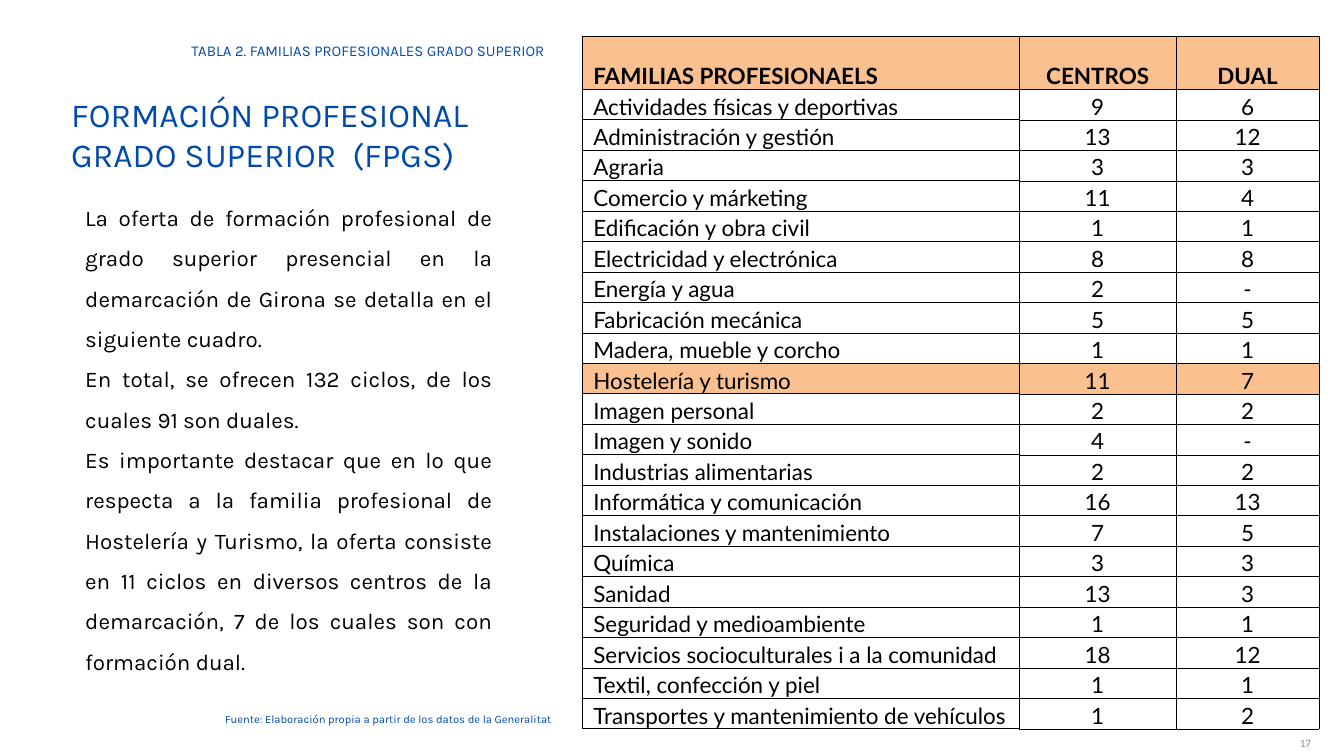
import pptx
import pptx.dml.color
import pptx.enum.text
import pptx.oxml
import pptx.oxml.ns
import pptx.util

EMU_PER_PX = 9144  # 100 px to the inch
COLORS = {"text": "000000", "blue": "004AAD", "highlight": "FAC090", "page": "8C8C8C"}
ALIGN = pptx.enum.text.PP_ALIGN
ANCHOR = pptx.enum.text.MSO_ANCHOR

HEADERS = ("FAMILIAS PROFESIONAELS", "CENTROS", "DUAL")
FAMILIES = [
    ("Actividades físicas y deportivas", 9, 6),
    ("Administración y gestión", 13, 12),
    ("Agraria", 3, 3),
    ("Comercio y márketing", 11, 4),
    ("Edificación y obra civil", 1, 1),
    ("Electricidad y electrónica", 8, 8),
    ("Energía y agua", 2, "-"),
    ("Fabricación mecánica", 5, 5),
    ("Madera, mueble y corcho", 1, 1),
    ("Hostelería y turismo", 11, 7),
    ("Imagen personal", 2, 2),
    ("Imagen y sonido", 4, "-"),
    ("Industrias alimentarias", 2, 2),
    ("Informática y comunicación", 16, 13),
    ("Instalaciones y mantenimiento", 7, 5),
    ("Química", 3, 3),
    ("Sanidad", 13, 3),
    ("Seguridad y medioambiente", 1, 1),
    ("Servicios socioculturales i a la comunidad", 18, 12),
    ("Textil, confección y piel", 1, 1),
    ("Transportes y mantenimiento de vehículos", 1, 2),
]
HIGHLIGHTED_FAMILY = "Hostelería y turismo"
BODY = [
    "La oferta de formación profesional de grado superior presencial en la "
    "demarcación de Girona se detalla en el siguiente cuadro.",
    "En total, se ofrecen 132 ciclos, de los cuales 91 son duales.",
    "Es importante destacar que en lo que respecta a la familia profesional de "
    "Hostelería y Turismo, la oferta consiste en 11 ciclos en diversos centros de la "
    "demarcación, 7 de los cuales son con formación dual.",
]


def px(length):
    return pptx.util.Emu(length * EMU_PER_PX)


def rgb(name):
    return pptx.dml.color.RGBColor.from_string(COLORS[name])


def format_paragraph(paragraph, size, color, font="Karla", align=ALIGN.LEFT, bold=False):
    paragraph.alignment = align
    paragraph.font.size = pptx.util.Pt(size)
    paragraph.font.name = font
    paragraph.font.bold = bold
    paragraph.font.color.rgb = rgb(color)


def add_text(slide, box, texts, size, color, spacing=1.0, anchor=ANCHOR.TOP, **style):
    frame = slide.shapes.add_textbox(*map(px, box)).text_frame
    frame.word_wrap = True
    frame.vertical_anchor = anchor
    frame.text = "\n".join(texts)
    for paragraph in frame.paragraphs:
        format_paragraph(paragraph, size, color, **style)
        paragraph.line_spacing = spacing


def set_title(slide, box, text):
    title = slide.shapes.title
    title.left, title.top, title.width, title.height = map(px, box)
    frame = title.text_frame
    frame.text = text
    frame.word_wrap = True
    frame.auto_size = pptx.enum.text.MSO_AUTO_SIZE.NONE
    frame.vertical_anchor = ANCHOR.TOP
    format_paragraph(frame.paragraphs[0], 36, "blue")


def set_borders(cell, widths):
    """Draw the left, right, top and bottom borders, with widths in points."""
    properties = cell._tc.get_or_add_tcPr()
    for side, width in zip("LRTB", widths):
        properties.append(pptx.oxml.parse_xml(
            f'<a:ln{side} {pptx.oxml.ns.nsdecls("a")} w="{pptx.util.Pt(width)}">'
            f'<a:solidFill><a:srgbClr val="{COLORS["text"]}"/></a:solidFill></a:ln{side}>'))


def format_cell(cell, text, column, bold, filled):
    cell.text = str(text)
    cell.vertical_anchor = ANCHOR.BOTTOM
    cell.margin_left = px(16 if column == 0 else 0)
    cell.margin_right = cell.margin_top = cell.margin_bottom = 0
    align = ALIGN.LEFT if column == 0 else ALIGN.CENTER
    format_paragraph(cell.text_frame.paragraphs[0], 24, "text", "Lato", align, bold)
    # The first column is framed with thicker lines
    set_borders(cell, [(1, 1, 1, 1), (1, 0.5, 0.5, 0.5), (0.5,) * 4][column])
    if filled:
        cell.fill.solid()
        cell.fill.fore_color.rgb = rgb("highlight")
    else:
        cell.fill.background()


def add_families_table(slide, box, column_widths, header_height):
    rows = [HEADERS] + FAMILIES
    table = slide.shapes.add_table(len(rows), len(HEADERS), *map(px, box)).table
    table.horz_banding = False
    for column, width in zip(table.columns, column_widths):
        column.width = px(width)
    row_height = px(box[3] - header_height) // len(FAMILIES)
    for index, values in enumerate(rows):
        is_header = index == 0
        table.rows[index].height = px(header_height) if is_header else row_height
        filled = is_header or values[0] == HIGHLIGHTED_FAMILY
        for column, value in enumerate(values):
            format_cell(table.cell(index, column), value, column, is_header, filled)


def main():
    presentation = pptx.Presentation()
    presentation.slide_width, presentation.slide_height = px(2000), px(1125)
    slide = presentation.slides.add_slide(presentation.slide_layouts[5])

    # Table of professional families
    add_families_table(slide, (867, 54, 1096, 1031), (650, 233, 213), 79)

    # Title and explanation
    set_title(slide, (96, 134, 708, 131), "FORMACIÓN PROFESIONAL GRADO SUPERIOR  (FPGS)")
    add_text(slide, (117, 279, 625, 731), BODY, 24, "text", spacing=1.5, align=ALIGN.JUSTIFY)

    # Caption, source and page number
    add_text(slide, (275, 57, 817, 37),
             ["TABLA 2. FAMILIAS PROFESIONALES GRADO SUPERIOR"], 16, "blue")
    add_text(slide, (325, 1055, 568, 30),
             ["Fuente: Elaboración propia a partir de los datos de la Generalitat"], 12, "blue")
    add_text(slide, (1728, 1085, 233, 40), ["17"], 12, "page",
             anchor=ANCHOR.MIDDLE, font="Calibri", align=ALIGN.RIGHT)

    presentation.save("out.pptx")


if __name__ == "__main__":
    main()
